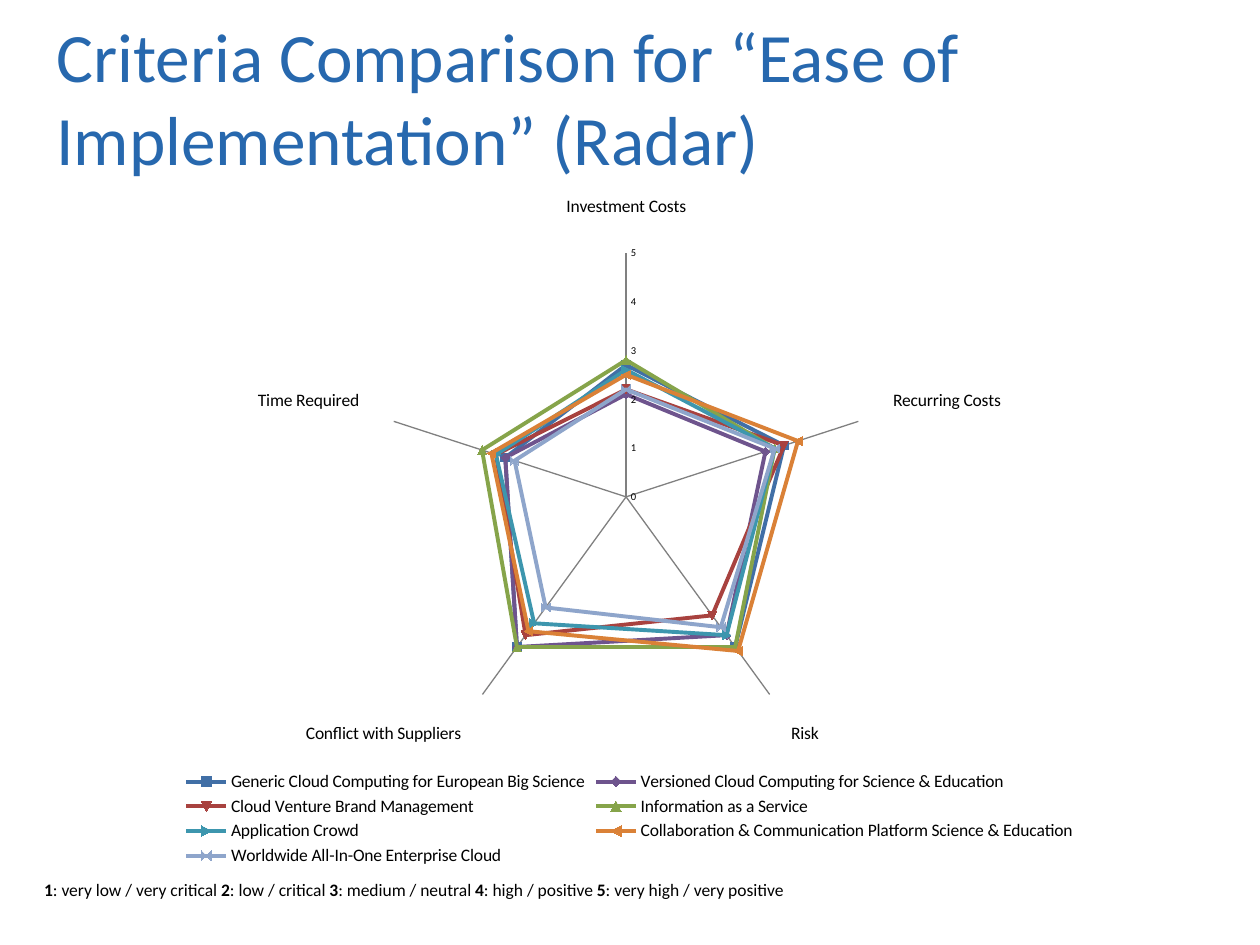
from dataclasses import dataclass

from pptx import Presentation
from pptx.chart.data import CategoryChartData
from pptx.dml.color import RGBColor
from pptx.enum.chart import XL_CHART_TYPE, XL_LEGEND_POSITION, XL_TICK_MARK
from pptx.enum.text import MSO_ANCHOR
from pptx.util import Inches, Pt

RADAR = XL_CHART_TYPE.RADAR_MARKERS
LEGEND_BOTTOM = XL_LEGEND_POSITION.BOTTOM
NO_TICK = XL_TICK_MARK.NONE
MIDDLE, BOTTOM = MSO_ANCHOR.MIDDLE, MSO_ANCHOR.BOTTOM


@dataclass(frozen=True)
class Theme:
    font: str = "Calibri"
    title_color: str = "2768AE"
    text_color: str = "000000"
    axis_color: str = "808080"
    title_size: float = 39.6
    body_size: float = 10
    scale_size: float = 6
    line_width: float = 2.25


LEFT, WIDTH = 0.35, 9.29
TITLE = "Criteria Comparison for “Ease of Implementation” (Radar)"
CRITERIA = ["Investment Costs", "Recurring Costs", "Risk",
            "Conflict with Suppliers", "Time Required"]
# Name, line colour, rating per criterion
SERVICES = [
    ("Generic Cloud Computing for European Big Science", "416FA6", (2.7, 3.4, 3.8, 3.8, 2.6)),
    ("Versioned Cloud Computing for Science & Education", "6E548D", (2.1, 3, 3.5, 3.8, 2.6)),
    ("Cloud Venture Brand Management", "A8423F", (2.2, 3.4, 3, 3.5, 2.8)),
    ("Information as a Service", "86A44A", (2.8, 3.2, 3.8, 3.8, 3.1)),
    ("Application Crowd", "3D96AE", (2.6, 3.2, 3.5, 3.2, 2.8)),
    ("Collaboration & Communication Platform Science & Education", "DA8137",
     (2.5, 3.7, 3.9, 3.4, 2.9)),
    ("Worldwide All-In-One Enterprise Cloud", "8EA5CB", (2.2, 3.2, 3.3, 2.8, 2.4)),
]
RATINGS = ["very low / very critical", "low / critical", "medium / neutral",
           "high / positive", "very high / very positive"]


def format_font(font, name, size, color, bold=False):
    font.name = name
    font.size = Pt(size)
    font.bold = bold
    font.color.rgb = RGBColor.from_string(color)


def add_text(paragraph, text, **font_format):
    run = paragraph.add_run()
    run.text = text
    format_font(run.font, **font_format)


class SlideBuilder:
    def __init__(self, slide, theme):
        self.slide = slide
        self.theme = theme

    def text_box(self, top, height, anchor, margins=None):
        """Add an empty full-width box and return its first paragraph."""
        shape = self.slide.shapes.add_textbox(
            Inches(LEFT), Inches(top), Inches(WIDTH), Inches(height))
        frame = shape.text_frame
        frame.word_wrap = True
        frame.vertical_anchor = anchor
        if margins is not None:
            frame.margin_left = frame.margin_right = Inches(margins)
            frame.margin_top = frame.margin_bottom = Inches(margins)
        return frame.paragraphs[0]

    def title(self, text):
        theme = self.theme
        add_text(self.text_box(0.35, 0.83, MIDDLE), text, name=theme.font,
                 size=theme.title_size, color=theme.title_color)

    def rating_key(self, ratings):
        theme = self.theme
        style = dict(name=theme.font, size=theme.body_size, color=theme.text_color)
        paragraph = self.text_box(6.97, 0.17, BOTTOM, margins=0)
        for number, rating in enumerate(ratings, start=1):
            ending = " " if number < len(ratings) else ""
            add_text(paragraph, str(number), bold=True, **style)
            add_text(paragraph, f": {rating}{ending}", **style)

    def radar_chart(self, categories, services):
        theme = self.theme
        data = CategoryChartData(number_format="0.0")
        data.categories = categories
        for name, _, values in services:
            data.add_series(name, values)
        chart = self.slide.shapes.add_chart(
            RADAR, Inches(LEFT), Inches(1.45), Inches(WIDTH), Inches(5.46), data).chart
        chart.has_title = False
        format_font(chart.font, theme.font, theme.body_size, theme.text_color)

        # Legend
        chart.has_legend = True
        chart.legend.position = LEGEND_BOTTOM
        chart.legend.include_in_layout = False
        format_font(chart.legend.font, theme.font, theme.body_size, theme.text_color)

        # Axes
        scale = chart.value_axis
        scale.minimum_scale, scale.maximum_scale, scale.major_unit = 0, 5, 1
        scale.has_major_gridlines = False
        scale.tick_labels.number_format = "0"
        scale.tick_labels.number_format_is_linked = False
        chart.category_axis.has_major_gridlines = True
        for axis, size in ((chart.category_axis, theme.body_size), (scale, theme.scale_size)):
            axis.major_tick_mark = axis.minor_tick_mark = NO_TICK
            axis.format.line.color.rgb = RGBColor.from_string(theme.axis_color)
            format_font(axis.tick_labels.font, theme.font, size, theme.text_color)

        # Series
        plot = chart.plots[0]
        plot.vary_by_categories = False
        for series, (_, color, _) in zip(plot.series, services):
            rgb = RGBColor.from_string(color)
            series.format.line.color.rgb = rgb
            series.format.line.width = Pt(theme.line_width)
            series.marker.format.fill.solid()
            series.marker.format.fill.fore_color.rgb = rgb
            series.marker.format.line.color.rgb = rgb


def main():
    presentation = Presentation()
    presentation.slide_width = Inches(10)
    presentation.slide_height = Inches(7.5)
    slide = presentation.slides.add_slide(presentation.slide_layouts[6])

    builder = SlideBuilder(slide, Theme())
    builder.title(TITLE)
    builder.rating_key(RATINGS)
    builder.radar_chart(CRITERIA, SERVICES)

    presentation.save("out.pptx")


if __name__ == "__main__":
    main()
